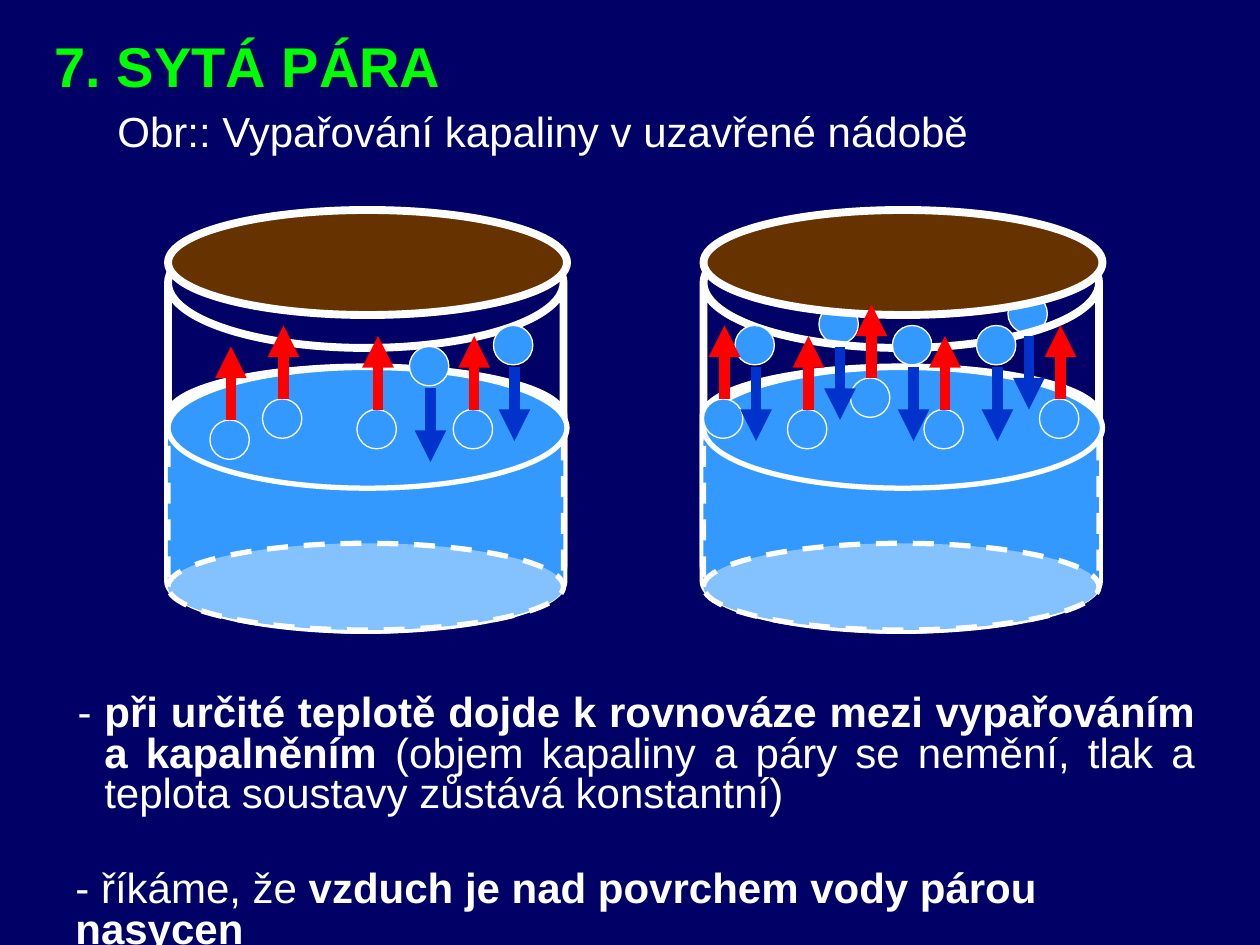
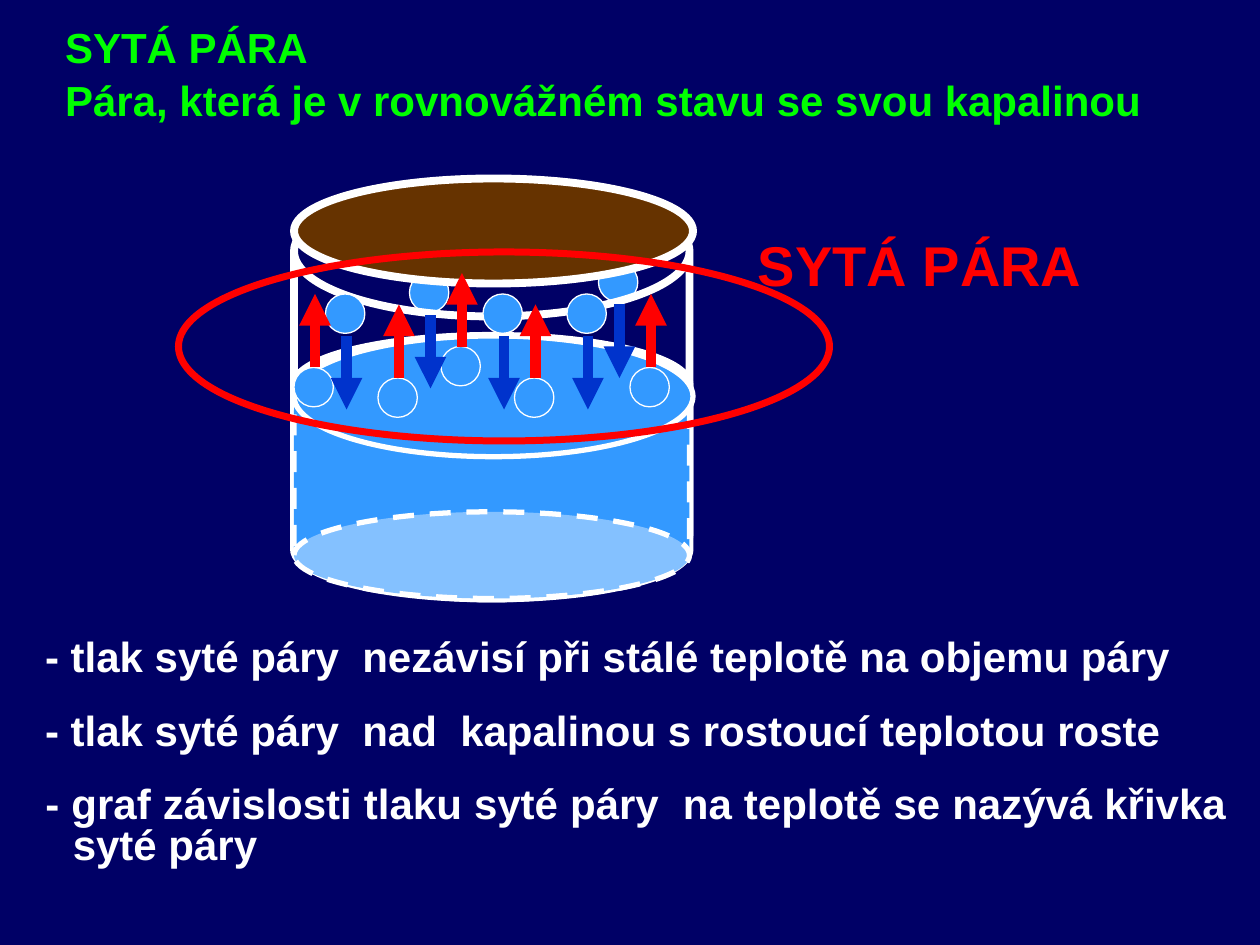
from dataclasses import dataclass

import lxml.etree
import pptx
import pptx.dml.color
import pptx.enum.dml
import pptx.enum.shapes
import pptx.enum.text
import pptx.oxml.ns
import pptx.util

Pt = pptx.util.Pt
Shapes = pptx.enum.shapes.MSO_SHAPE
Align = pptx.enum.text.PP_ALIGN


@dataclass(frozen=True)
class Theme:
    font: str = "Arial"
    heading_size: int = 32
    body_size: int = 24
    background: str = "000066"
    title: str = "00FF00"
    text: str = "FFFFFF"
    glass: str = "FFFFFF"
    water: str = "3399FF"
    lid: str = "663300"
    rising: str = "FF0000"
    falling: str = "0033CC"
    highlight: str = "FF0000"


@dataclass(frozen=True)
class Molecules:
    """Molecule positions measured from the top left corner of a vessel."""
    evaporating: tuple
    condensing: tuple
    behind_glass: tuple = ()


THEME = Theme()
MOLECULE_SIZE = 22.5
ARROW_LENGTH = 42
ARROW_OFFSET = 12
FALL_OFFSET = 24

EARLY = Molecules(
    evaporating=((108, 114), (24, 120), (163, 114), (54, 108)),
    condensing=((186, 66), (138, 78)),
)
SATURATED = Molecules(
    evaporating=((84, 96), (126, 114), (48, 114), (0, 108), (192, 108)),
    condensing=((18, 66), (108, 66), (156, 66)),
    behind_glass=((174, 48), (66, 54)),
)


def rgb(color):
    return pptx.dml.color.RGBColor.from_string(color)


def write_text(shape, paragraphs, size=THEME.body_size, color=THEME.text, bold=False,
               align=Align.LEFT, line_spacing=1.0, hanging=0, gap=0, wrap=True):
    """Fill a shape; a paragraph is a string or a list of (text, bold) runs."""
    frame = shape.text_frame
    frame.auto_size = pptx.enum.text.MSO_AUTO_SIZE.NONE
    frame.vertical_anchor = pptx.enum.text.MSO_ANCHOR.TOP
    frame.word_wrap = wrap
    frame.margin_top = Pt(6)
    for index, content in enumerate(paragraphs):
        paragraph = frame.add_paragraph() if index else frame.paragraphs[0]
        paragraph.alignment = align
        paragraph.line_spacing = line_spacing
        paragraph.space_before = Pt(gap if index else 0)
        if hanging:
            properties = paragraph._p.get_or_add_pPr()
            properties.set("marL", str(Pt(hanging)))
            properties.set("indent", str(-Pt(hanging)))
        runs = [(content, bold)] if isinstance(content, str) else content
        for text, is_bold in runs:
            run = paragraph.add_run()
            run.text = text
            run.font.name = THEME.font
            run.font.size = Pt(size)
            run.font.bold = is_bold
            run.font.color.rgb = rgb(color)


def add_text(slide, box, paragraphs, **text_format):
    shape = slide.shapes.add_textbox(*map(Pt, box))
    write_text(shape, paragraphs, **text_format)


def add_body(slide, box, content, **text_format):
    add_text(slide, box, [content], line_spacing=0.8, **text_format)


def add_titled_slide(presentation, box, paragraphs, **text_format):
    slide = presentation.slides.add_slide(presentation.slide_layouts[5])
    title = slide.shapes.title
    title.left, title.top, title.width, title.height = map(Pt, box)
    write_text(title, paragraphs, color=THEME.title, bold=True, **text_format)
    return slide


def add_outlined(shapes, kind, box, fill=None, line=THEME.glass, line_width=4.5, depth=None):
    """Add a preset shape; depth is the relative height of a can's rim."""
    shape = shapes.add_shape(kind, *map(Pt, box))
    shape.shadow.inherit = False
    if fill:
        shape.fill.solid()
        shape.fill.fore_color.rgb = rgb(fill)
    else:
        shape.fill.background()
    shape.line.color.rgb = rgb(line)
    shape.line.width = Pt(line_width)
    if depth:
        shape.adjustments[0] = depth
    return shape


def add_arrow(shapes, x, start, end, color):
    arrow = shapes.add_connector(pptx.enum.shapes.MSO_CONNECTOR.STRAIGHT,
                                 Pt(x), Pt(start), Pt(x), Pt(end))
    arrow.line.color.rgb = rgb(color)
    arrow.line.width = Pt(6)
    qualified = pptx.oxml.ns.qn
    properties = arrow._element.spPr
    outline = properties.find(qualified("a:ln"))
    lxml.etree.SubElement(outline, qualified("a:tailEnd"), type="triangle")
    lxml.etree.SubElement(properties, qualified("a:effectLst"))


def add_molecules(shapes, left, top, positions):
    for x, y in positions:
        add_outlined(shapes, Shapes.OVAL,
                     (left + x, top + y, MOLECULE_SIZE, MOLECULE_SIZE),
                     fill=THEME.water, line_width=0.75)


def add_vessel(slide, left, top, molecules):
    """Draw a closed vessel of water with rising and falling molecules."""
    shapes = slide.shapes.add_group_shape().shapes
    add_molecules(shapes, left, top, molecules.behind_glass)
    add_outlined(shapes, Shapes.CAN, (left, top + 4.5, 226, 235.5), depth=0.329)
    add_outlined(shapes, Shapes.CAN, (left, top + 90, 226, 150),
                 fill=THEME.water, depth=0.374)
    bottom = add_outlined(shapes, Shapes.CAN, (left, top + 107.5, 226, 132.5),
                          fill=THEME.water, line_width=3, depth=0.374)
    bottom.rotation = 180
    bottom.line.dash_style = pptx.enum.dml.MSO_LINE.DASH
    add_outlined(shapes, Shapes.OVAL, (left, top + 90, 228, 69),
                 fill=THEME.water, line_width=3)
    add_outlined(shapes, Shapes.OVAL, (left, top, 228, 60), fill=THEME.lid)

    add_molecules(shapes, left, top, molecules.evaporating + molecules.condensing)
    for x, y in molecules.evaporating:
        start = top + y
        add_arrow(shapes, left + x + ARROW_OFFSET, start, start - ARROW_LENGTH, THEME.rising)
    for x, y in molecules.condensing + molecules.behind_glass:
        start = top + y + FALL_OFFSET
        add_arrow(shapes, left + x + ARROW_OFFSET, start, start + ARROW_LENGTH, THEME.falling)


def build_evaporation_slide(presentation):
    slide = add_titled_slide(presentation, (24, 12, 396, 45), ["7. SYTÁ PÁRA"],
                             size=THEME.heading_size)
    add_vessel(slide, 402, 120, SATURATED)
    add_vessel(slide, 96, 120, EARLY)
    add_body(slide, (60, 60, 502, 30), "Obr:: Vypařování kapaliny v uzavřené nádobě", wrap=False)
    add_body(slide, (30, 391.5, 660, 76.5), [
        (" ", True),
        ("- ", False),
        ("při určité teplotě dojde k rovnováze mezi vypařováním a kapalněním", True),
        (" (objem kapaliny a páry se nemění, tlak a teplota soustavy zůstává konstantní)", False),
    ], align=Align.JUSTIFY, hanging=22.5)
    add_body(slide, (36, 492, 660, 30), [
        ("- říkáme, že", False),
        (" vzduch je nad povrchem vody párou nasycen", True),
    ])


def build_saturated_vapour_slide(presentation):
    slide = add_titled_slide(
        presentation, (30, 6, 631, 65),
        ["SYTÁ PÁRA", "Pára, která je v rovnovážném stavu se svou kapalinou"],
        align=Align.JUSTIFY, hanging=30, gap=1.5)
    add_vessel(slide, 168, 102, SATURATED)
    add_text(slide, (426, 126, 228, 45), ["SYTÁ PÁRA"],
             size=THEME.heading_size, color=THEME.highlight, bold=True)
    add_outlined(slide.shapes, Shapes.OVAL, (102, 144, 372, 108),
                 line=THEME.highlight, line_width=4)
    statements = (
        (" - tlak syté páry  nezávisí při stálé teplotě na objemu páry", 30, 30),
        (" - tlak syté páry  nad  kapalinou s rostoucí teplotou roste", 30, 30),
        (" - graf závislosti tlaku syté páry  na teplotě se nazývá křivka syté páry", 53, 22.5),
    )
    for index, (statement, height, hanging) in enumerate(statements):
        add_body(slide, (12, 360 + 42 * index, 696, height), statement,
                 bold=True, align=Align.JUSTIFY, hanging=hanging)


def main():
    presentation = pptx.Presentation()
    presentation.slide_width, presentation.slide_height = Pt(720), Pt(540)
    background = presentation.slide_master.background.fill
    background.solid()
    background.fore_color.rgb = rgb(THEME.background)
    build_evaporation_slide(presentation)
    build_saturated_vapour_slide(presentation)
    presentation.save("out.pptx")


if __name__ == "__main__":
    main()
